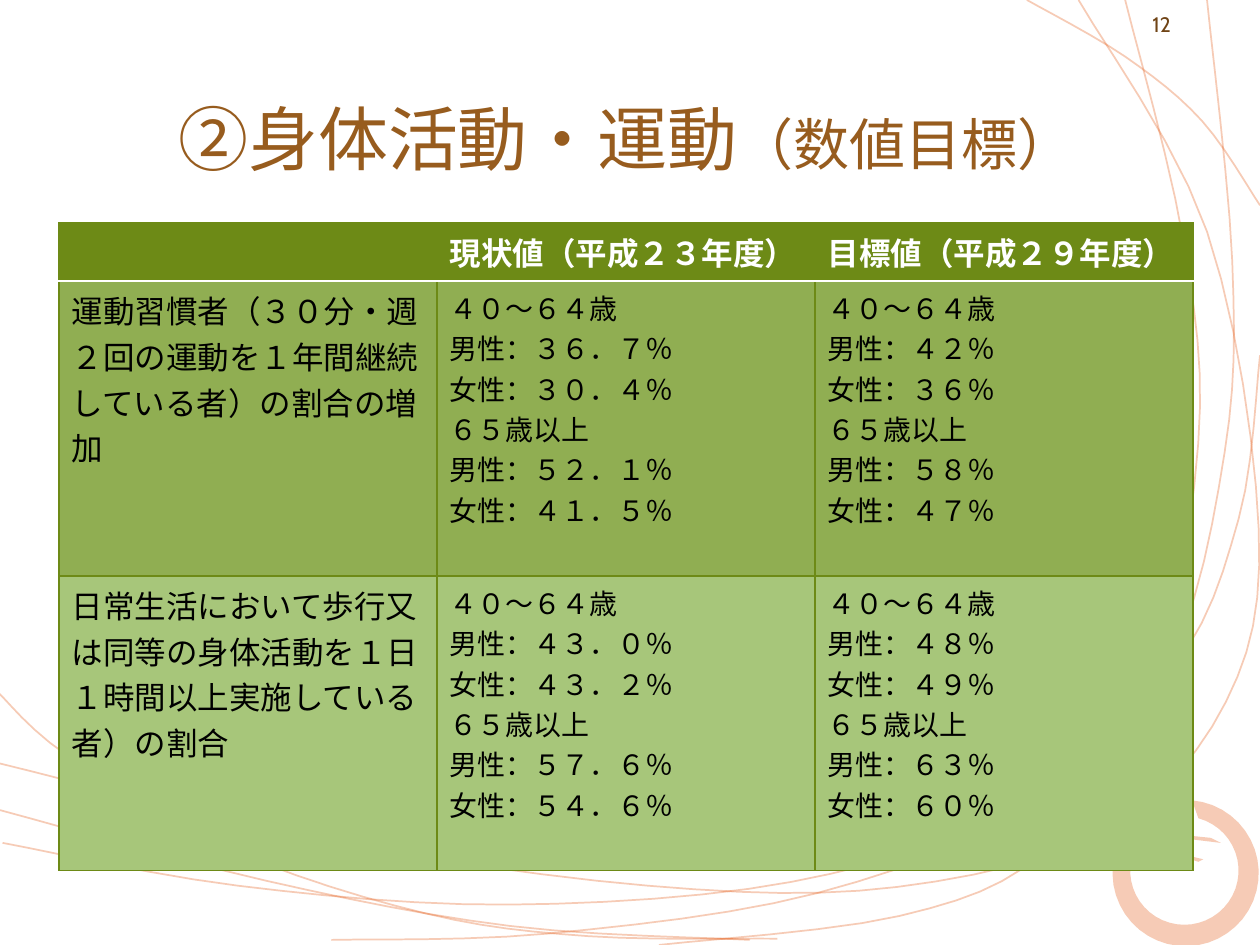
from dataclasses import dataclass
from math import cos, radians, sin

from lxml import etree
from pptx import Presentation
from pptx.dml.color import RGBColor
from pptx.enum.text import MSO_ANCHOR, PP_ALIGN
from pptx.oxml.ns import qn
from pptx.util import Inches, Pt

CENTER = PP_ALIGN.CENTER
MIDDLE = MSO_ANCHOR.MIDDLE


@dataclass(frozen=True)
class Theme:
    """Colours, fonts and type sizes of the slide."""
    brown: str = "975C1E"
    dark: str = "704416"
    orange: str = "E3560E"
    green: str = "6D8A16"
    mid: str = "90AE52"
    light: str = "A7C67A"
    white: str = "FFFFFF"
    black: str = "000000"
    head: str = "Calibri"
    body: str = "Arial"
    number: str = "Cabin"
    title: int = 40
    sub: int = 32
    label: int = 18
    value: int = 16
    small: int = 12


THEME = Theme()

CURVES = [
    [(-0.03, 5.48), (0.54, 6), (1.85, 6.75), (3.38, 7.25), (4.67, 7.43), (6.17, 7.45)],
    [(5.23, 7.5), (7.14, 7.27), (8.28, 6.77), (9.11, 5.63), (9.51, 3.52), (9.39, 1.9),
     (8.93, 0)],
    [(0, 6.06), (2.48, 6.65), (5.14, 7.03), (7.12, 7.04), (8.79, 6.58), (9.73, 5.57),
     (9.99, 4.2), (9.58, 1.84), (8.56, 0)],
    [(0.02, 6.69), (1.89, 7.03), (4.03, 7.18), (6.28, 7), (7.91, 6.45), (9.28, 5.34),
     (9.83, 4.12), (10, 2.82)],
    [(2.63, 7.46), (4.35, 7.41), (6.48, 7.09), (8.24, 6.38), (9.27, 5.27), (9.72, 3.59),
     (9.78, 2.07), (9.58, 0)],
    [(8.15, 0), (8.93, 0.45), (9.54, 0.96), (10, 1.63)],
    [(0, 6.43), (2.11, 6.99), (4.05, 7.35), (5.95, 7.46)],
]
FLECKS = [
    [(9.22, 6.61), (9.61, 6.65), (9.69, 6.69), (9.44, 6.66)],
    [(9.3, 6.76), (9.55, 6.82), (9.51, 6.84), (9.42, 6.81)],
]

HEADS = ["", "現状値（平成２３年度）", "目標値（平成２９年度）"]
GOALS = [
    ("運動習慣者（３０分・週２回の運動を１年間継続している者）の割合の増加",
     ["３６．７", "３０．４", "５２．１", "４１．５"], ["４２", "３６", "５８", "４７"]),
    ("日常生活において歩行又は同等の身体活動を１日１時間以上実施している者）の割合",
     ["４３．０", "４３．２", "５７．６", "５４．６"], ["４８", "４９", "６３", "６０"]),
]


def color(code):
    """Turn a hex code into a colour."""
    return RGBColor.from_string(code)


def style(font, name, size, code, bold=False):
    """Set the look of a font."""
    font.name, font.size, font.bold = name, Pt(size), bold
    font.color.rgb = color(code)


def paint(fill, code, alpha):
    """Fill with a see-through colour; alpha is in percent."""
    fill.solid()
    fill.fore_color.rgb = color(code)
    tint = next(fill._xPr.iter(qn("a:srgbClr")))
    etree.SubElement(tint, qn("a:alpha"), val=str(alpha * 1000))


def blend(a, b, c, d, t):
    """Find the spline value between b and c."""
    return b + t / 2 * (c - a + t * (2 * a - 5 * b + 4 * c - d + t * (3 * (b - c) + d - a)))


def smooth(knots, steps=6):
    """Run a Catmull-Rom spline through the knots."""
    ends = [knots[0], *knots, knots[-1]]
    points = [tuple(blend(*axis, s / steps) for axis in zip(*quad))
              for quad in zip(ends, ends[1:], ends[2:], ends[3:])
              for s in range(steps)]
    return points + [knots[-1]]


def arc(x, y, size, start, stop, steps=40):
    """List the points of an arc between two angles in degrees."""
    turns = [radians(start + (stop - start) * i / steps) for i in range(steps + 1)]
    return [(x + size * cos(a), y + size * sin(a)) for a in turns]


def outline(slide, box, points, close):
    """Draw a freeform through points in inches."""
    first, *rest = [(Inches(x), Inches(y)) for x, y in points]
    pen = slide.shapes.build_freeform(*first)
    pen.add_line_segments(rest, close=close)
    shape = pen.convert_to_shape(Inches(box[0]), Inches(box[1]))
    shape.shadow.inherit = False
    return shape


def backdrop(slide, box):
    """Draw the thin curves and the brushed ring."""
    for knots in CURVES:
        shape = outline(slide, box, smooth(knots), False)
        shape.fill.background()
        shape.line.width = Pt(1)
        paint(shape.line.fill, THEME.orange, 29)
    ring = arc(9.41, 6.93, 0.58, -85, 245) + arc(9.4, 6.91, 0.43, 240, -75)
    for points in [ring, *FLECKS]:
        shape = outline(slide, box, points, True)
        shape.line.fill.background()
        paint(shape.fill, THEME.orange, 30)


def textbox(slide, box):
    """Add a centred text box and return its paragraph."""
    frame = slide.shapes.add_textbox(*map(Inches, box)).text_frame
    frame.word_wrap = True
    frame.vertical_anchor = MIDDLE
    para = frame.paragraphs[0]
    para.alignment = CENTER
    return para


def heading(slide, box):
    """Write the title with its smaller suffix."""
    para = textbox(slide, box)
    for text, size in (("②身体活動・運動", THEME.title), ("（数値目標）", THEME.sub)):
        run = para.add_run()
        run.text = text
        style(run.font, THEME.head, size, THEME.brown)


def folio(slide, box):
    """Write the slide number."""
    para = textbox(slide, box)
    para.text = "12"
    style(para.font, THEME.number, THEME.small, THEME.dark)


def rates(vals):
    """List the rates by age group and sex."""
    rows = [f"{sex}：{val}％" for sex, val in zip(["男性", "女性"] * 2, vals)]
    return "\n".join(["４０～６４歳", *rows[:2], "６５歳以上", *rows[2:]])


def edge(cell, side, code, width):
    """Draw one border of a cell."""
    line = etree.SubElement(cell._tc.get_or_add_tcPr(), qn(f"a:ln{side}"), w=str(Pt(width)))
    fill = etree.SubElement(line, qn("a:solidFill"))
    etree.SubElement(fill, qn("a:srgbClr"), val=code)


def grid(slide, box):
    """Build the table of current and target values."""
    rows = [HEADS] + [[name, rates(now), rates(goal)] for name, now, goal in GOALS]
    fills = [THEME.green, THEME.mid, THEME.light]
    table = slide.shapes.add_table(len(rows), len(HEADS), *map(Inches, box)).table
    top = 0.46
    rest = (box[3] - top) / len(GOALS)
    for r, texts in enumerate(rows):
        table.rows[r].height = Inches(rest if r else top)
        for c, text in enumerate(texts):
            cell = table.cell(r, c)
            cell.text = text
            for side in "LRTB":
                white = (r, side) in ((0, "B"), (1, "T"))
                edge(cell, side, THEME.white if white else THEME.green, 1.5 if white else 1)
            cell.fill.solid()
            cell.fill.fore_color.rgb = color(fills[r])
            size = THEME.value if r and c else THEME.label
            for para in cell.text_frame.paragraphs:
                if r:
                    style(para.font, THEME.body, size, THEME.black)
                else:
                    style(para.font, THEME.head, size, THEME.white, True)


def main():
    """Build and save the slide."""
    deck = Presentation()
    deck.slide_width, deck.slide_height = Inches(10), Inches(7.5)
    slide = deck.slides.add_slide(deck.slide_layouts[6])
    backdrop(slide, (0, 0, 10, 7.5))
    heading(slide, (0.47, 0.47, 9, 1.25))
    grid(slide, (0.47, 1.77, 9, 5.14))
    folio(slide, (8.44, 0, 1.56, 0.39))
    deck.save("out.pptx")


if __name__ == "__main__":
    main()
